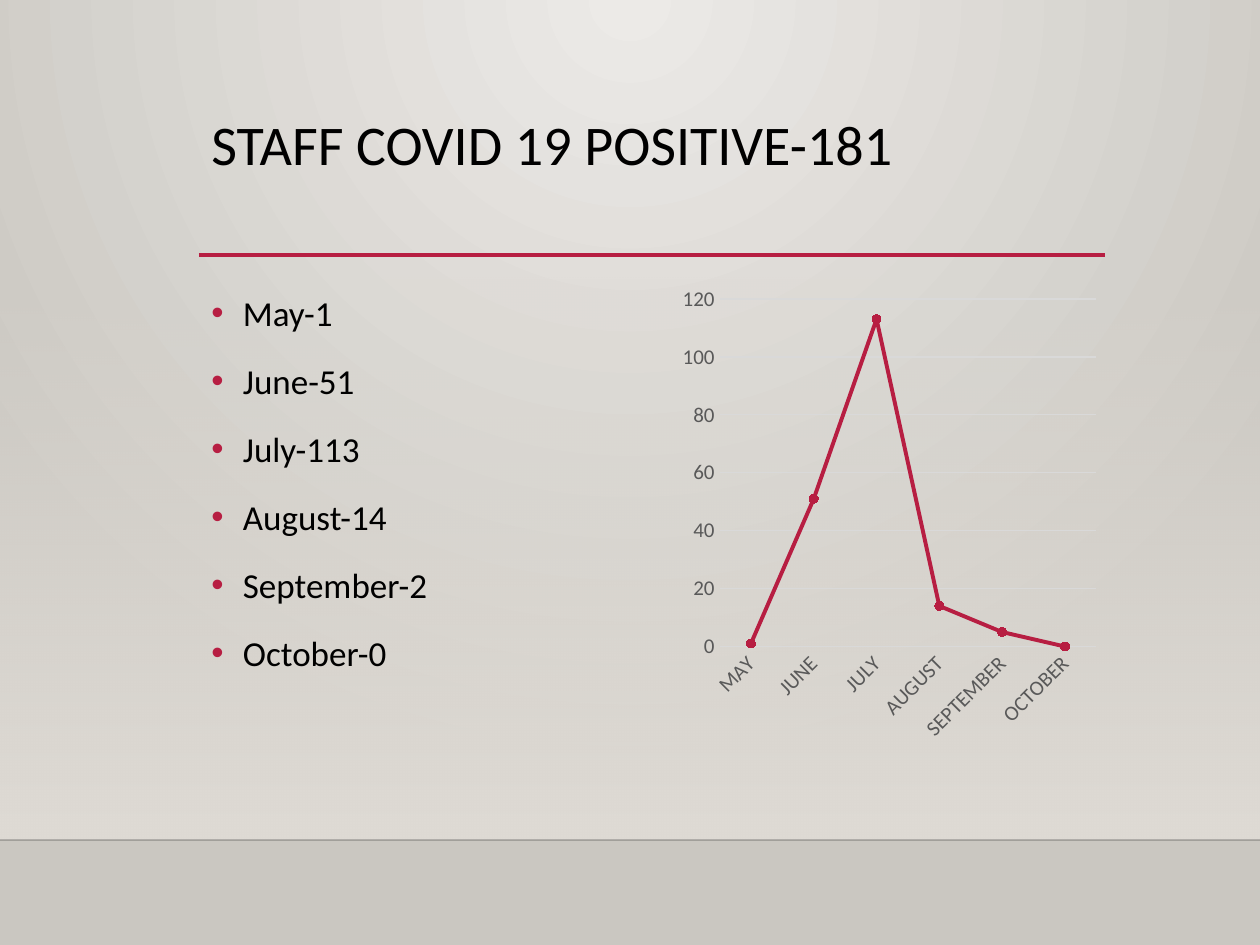
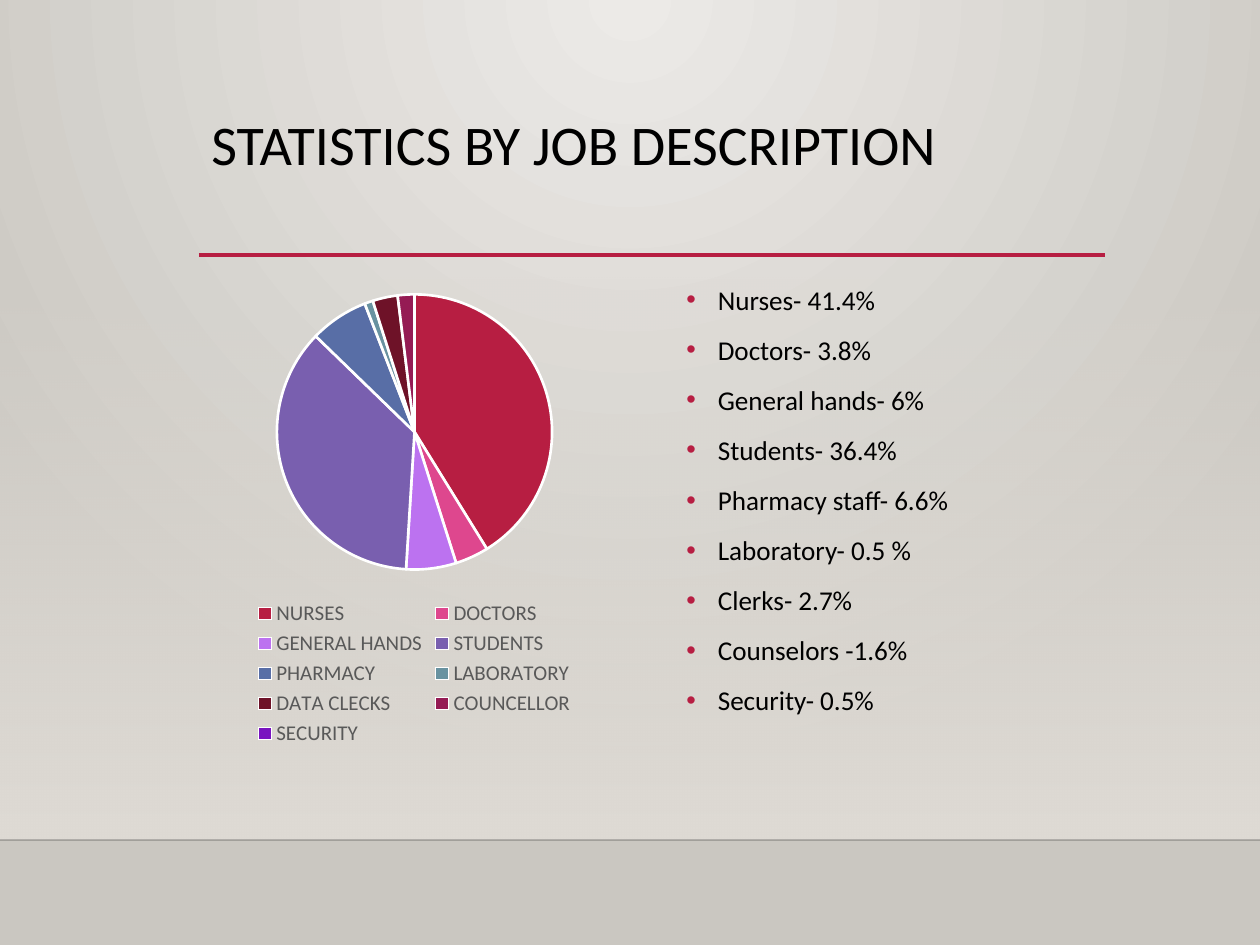
"""Build two slides of staff COVID 19 statistics, each with a chart and a list."""
from pptx import Presentation
from pptx.chart.data import CategoryChartData
from pptx.dml.color import RGBColor
from pptx.enum.chart import (XL_CHART_TYPE, XL_LEGEND_POSITION,
                             XL_MARKER_STYLE, XL_TICK_MARK)
from pptx.enum.shapes import MSO_CONNECTOR, MSO_SHAPE
from pptx.enum.text import MSO_ANCHOR
from pptx.oxml import parse_xml
from pptx.oxml.ns import nsdecls, qn
from pptx.util import Emu, Pt

THEME = {
    "font": "Calibri", "title": 32, "label": 12,
    "text": "000000", "accent": "B71E42", "muted": "595959", "grid": "D9D9D9",
    "edge": "FFFFFF", "rule": "000001",
    "back": ("ECEAE7", "CAC7C1"), "floor": ("DFDBD5", "DFDBD5"),
    "slices": ("B71E42", "DE478E", "BC72F0", "795FAF", "586EA6",
               "6892A0", "6E1228", "951B54", "7914C0"),
}
SLIDES = [
    {
        "title": "STAFF COVID 19 POSITIVE-181",
        "list_side": "left", "size": 20, "spacing": 1.2,
        "items": ["May-1", "June-51", "July-113", "August-14",
                  "September-2", "October-0"],
        "chart": "line",
        "data": {"MAY": 1, "JUNE": 51, "JULY": 113, "AUGUST": 14,
                 "SEPTEMBER": 5, "OCTOBER": 0},
    },
    {
        "title": "STATISTICS BY JOB DESCRIPTION",
        "list_side": "right", "size": 15.5, "spacing": 1.0,
        "items": ["Nurses- 41.4%", "Doctors- 3.8%", "General hands- 6%",
                  "Students- 36.4%", "Pharmacy staff- 6.6%",
                  "Laboratory- 0.5 %", "Clerks- 2.7%", "Counselors -1.6%",
                  "Security- 0.5%"],
        "chart": "pie",
        "data": {"NURSES": 42, "DOCTORS": 4, "GENERAL HANDS": 6,
                 "STUDENTS": 37, "PHARMACY": 7, "LABORATORY": 1,
                 "DATA CLECKS": 3, "COUNCELLOR": 2, "SECURITY": None},
    },
]

SCALE = 914400 / 126
WIDTH, HEIGHT = 1260, 945
LEFT, RIGHT, COLUMN = 199, 674, 431
END = RIGHT + COLUMN
TITLE_TOP, TITLE_HEIGHT = 111, 146
RULE_Y, BODY_TOP, BODY_HEIGHT, FLOOR_Y = 255, 277, 474, 840


def px(*values):
    return [Emu(round(v * SCALE)) for v in values]


def rgb(name):
    return RGBColor.from_string(THEME.get(name, name))


def put(obj, **values):
    for name, value in values.items():
        setattr(obj, name, value)


def set_font(font, size, color):
    put(font, name=THEME["font"], size=Pt(size))
    font.color.rgb = rgb(color)


def set_line(line, color, width):
    line.color.rgb = rgb(color)
    line.width = Pt(width)


def set_alpha(color_el, percent):
    color_el.append(parse_xml(
        f'<a:alpha {nsdecls("a")} val="{percent * 1000}"/>'))


def set_gradient(fill, colors):
    fill.gradient()
    for stop, color in zip(fill.gradient_stops, colors):
        stop.color.rgb = rgb(color)


def add_rule(s, x1, x2, y, color, width):
    line = s.shapes.add_connector(MSO_CONNECTOR.STRAIGHT, *px(x1, y, x2, y))
    set_line(line.line, color, width)
    line._element.spPr.append(parse_xml(f'<a:effectLst {nsdecls("a")}/>'))
    return line


def add_backdrop(s):
    set_gradient(s.background.fill, THEME["back"])
    lin = s._element.find(".//" + qn("a:lin"))
    lin.getparent().replace(lin, parse_xml(
        f'<a:path {nsdecls("a")} path="circle">'
        '<a:fillToRect l="43000" r="43000" b="100000"/></a:path>'))

    band = s.shapes.add_shape(
        MSO_SHAPE.RECTANGLE, *px(0, BODY_TOP, WIDTH, FLOOR_Y - BODY_TOP))
    band.shadow.inherit = False
    band.line.fill.background()
    set_gradient(band.fill, THEME["floor"])
    band.fill.gradient_angle = 270
    set_alpha(band._element.spPr.find(".//" + qn("a:srgbClr")), 0)

    floor = add_rule(s, 0, WIDTH, FLOOR_Y, "rule", 1)
    set_alpha(floor._element.spPr.find(".//" + qn("a:srgbClr")), 20)
    add_rule(s, LEFT, END, RULE_Y, "accent", 2.5)


def add_text(s, box, lines, size, spacing, bullets=False):
    tf = s.shapes.add_textbox(*px(*box)).text_frame
    put(tf, word_wrap=True, vertical_anchor=MSO_ANCHOR.TOP)
    for i, text in enumerate(lines):
        p = tf.paragraphs[0] if i == 0 else tf.add_paragraph()
        put(p, line_spacing=spacing, space_before=Pt(10 if i else 0))
        if bullets:
            add_bullet(p)
        r = p.add_run()
        r.text = text
        set_font(r.font, size, "text")


def add_bullet(p):
    pPr = p._p.get_or_add_pPr()
    pPr.set("marL", "228600")
    pPr.set("indent", "-228600")
    for xml in (f'<a:buClr {nsdecls("a")}><a:srgbClr val="{THEME["accent"]}"/></a:buClr>',
                f'<a:buFont {nsdecls("a")} typeface="Arial"/>',
                f'<a:buChar {nsdecls("a")} char="•"/>'):
        pPr.append(parse_xml(xml))


def format_line(chart):
    chart.has_legend = False
    for axis in (chart.category_axis, chart.value_axis):
        put(axis, major_tick_mark=XL_TICK_MARK.NONE,
            minor_tick_mark=XL_TICK_MARK.NONE)
        set_font(axis.tick_labels.font, THEME["label"], "muted")
    months, counts = chart.category_axis, chart.value_axis
    set_line(months.format.line, "grid", 0.75)
    months._element.find(qn("c:txPr")).find(qn("a:bodyPr")).set("rot", "-2700000")
    put(counts, minimum_scale=0, maximum_scale=120, major_unit=20,
        has_major_gridlines=True)
    set_line(counts.major_gridlines.format.line, "grid", 0.75)
    counts.format.line.fill.background()

    series = chart.plots[0].series[0]
    series.smooth = False
    set_line(series.format.line, "accent", 2.25)
    marker = series.marker
    put(marker, style=XL_MARKER_STYLE.CIRCLE, size=5)
    marker.format.fill.solid()
    marker.format.fill.fore_color.rgb = rgb("accent")
    set_line(marker.format.line, "accent", 0.75)


def format_pie(chart):
    chart.has_legend = True
    put(chart.legend, position=XL_LEGEND_POSITION.BOTTOM,
        include_in_layout=False)
    set_font(chart.legend.font, THEME["label"], "muted")
    chart.plots[0].vary_by_categories = True
    for i, color in enumerate(THEME["slices"]):
        fmt = chart.plots[0].series[0].points[i].format
        fmt.fill.solid()
        fmt.fill.fore_color.rgb = rgb(color)
        set_line(fmt.line, "edge", 1.5)


CHARTS = {"line": (XL_CHART_TYPE.LINE_MARKERS, format_line),
          "pie": (XL_CHART_TYPE.PIE, format_pie)}


def add_chart(s, box, kind, values):
    data = CategoryChartData()
    data.categories = list(values)
    data.add_series("Series 1", list(values.values()))
    chart_type, format_chart = CHARTS[kind]
    chart = s.shapes.add_chart(chart_type, *px(*box), data).chart
    chart.has_title = False
    set_font(chart.font, 10, "text")
    format_chart(chart)


def main():
    prs = Presentation()
    prs.slide_width, prs.slide_height = px(WIDTH, HEIGHT)
    for content in SLIDES:
        s = prs.slides.add_slide(prs.slide_layouts[6])
        add_backdrop(s)
        add_text(s, (LEFT, TITLE_TOP, END - LEFT, TITLE_HEIGHT),
                 [content["title"]], THEME["title"], 0.9)
        list_x, chart_x = LEFT, RIGHT
        if content["list_side"] == "right":
            list_x, chart_x = RIGHT, LEFT
        add_chart(s, (chart_x, BODY_TOP, COLUMN, BODY_HEIGHT),
                  content["chart"], content["data"])
        add_text(s, (list_x, BODY_TOP, COLUMN, BODY_HEIGHT), content["items"],
                 content["size"], content["spacing"], bullets=True)
    prs.save("out.pptx")


if __name__ == "__main__":
    main()
